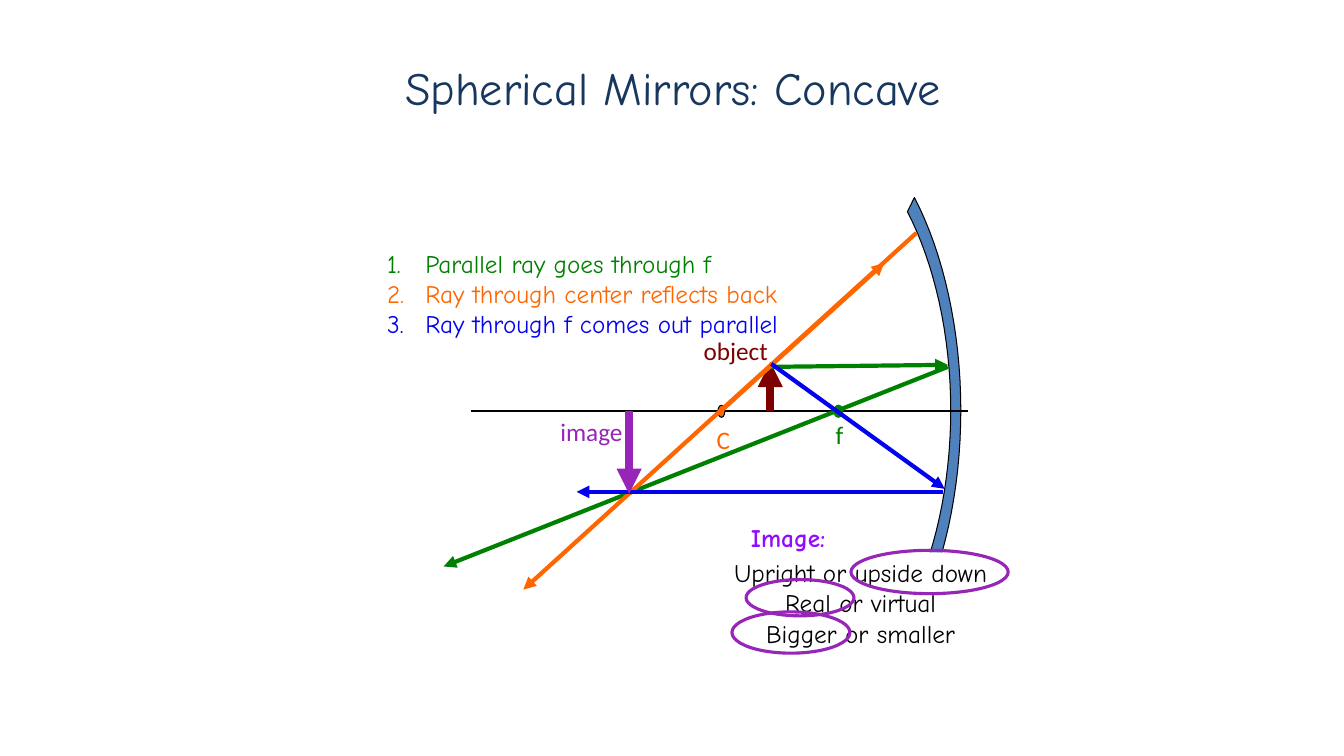
from lxml import etree
from pptx import Presentation
from pptx.dml.color import RGBColor
from pptx.enum import shapes, text
from pptx.oxml.ns import qn
from pptx.util import Inches, Pt

NAVY = RGBColor(0x17, 0x37, 0x5E)
STEEL = RGBColor(0x4F, 0x81, 0xBD)
BLACK = RGBColor(0, 0, 0)
WHITE = RGBColor(255, 255, 255)
GREEN = RGBColor(0, 0x80, 0)
ORANGE = RGBColor(0xFF, 0x66, 0)
BLUE = RGBColor(0x03, 0x02, 0xEF)
MAROON = RGBColor(0x7D, 0x01, 0x01)
PURPLE = RGBColor(0x96, 0x25, 0xB8)
VIOLET = RGBColor(0x92, 0x0A, 0xFF)
HAND_FONT = "Comic Neue"
AXIS_Y = 4.08

presentation = Presentation()
presentation.slide_width = Inches(13.33)
presentation.slide_height = Inches(7.5)
slide = presentation.slides.add_slide(presentation.slide_layouts[5])


def add_line(start, end, color, width, arrow=True):
    connector = slide.shapes.add_connector(
        shapes.MSO_CONNECTOR.STRAIGHT, *map(Inches, start + end))
    connector.line.color.rgb = color
    connector.line.width = Pt(width)
    properties = connector._element.spPr
    if arrow:
        outline = properties.find(qn("a:ln"))
        etree.SubElement(outline, qn("a:tailEnd"), type="triangle")
    etree.SubElement(properties, qn("a:effectLst"))


def add_text(box, lines, font, align=text.PP_ALIGN.LEFT, wrap=False, bold=False,
             fill=None, numbered=False):
    shape = slide.shapes.add_textbox(*map(Inches, box))
    if fill is not None:
        shape.fill.solid()
        shape.fill.fore_color.rgb = fill
    frame = shape.text_frame
    frame.word_wrap = wrap
    for index, (line, color) in enumerate(lines):
        paragraph = frame.paragraphs[0] if index == 0 else frame.add_paragraph()
        paragraph.text = line
        paragraph.alignment = align
        if numbered:
            properties = paragraph._p.get_or_add_pPr()
            properties.set("marL", str(Inches(0.38)))
            properties.set("indent", str(-Inches(0.38)))
            etree.SubElement(properties, qn("a:buAutoNum"), type="arabicPeriod")
        paragraph.font.size = Pt(18)
        paragraph.font.name = font
        paragraph.font.bold = bold
        paragraph.font.color.rgb = color


# Title
title = slide.shapes.title
title.left, title.top, title.width, title.height = map(Inches, (3.02, 0.39, 7.31, 0.94))
title.text_frame.text = "Spherical Mirrors: Concave"
title.text_frame.vertical_anchor = text.MSO_ANCHOR.MIDDLE
paragraph = title.text_frame.paragraphs[0]
paragraph.alignment = text.PP_ALIGN.CENTER
paragraph.font.size = Pt(33)
paragraph.font.name = HAND_FONT
paragraph.font.color.rgb = NAVY

# Curved mirror: inner edge down, outer edge back up
mirror_curves = [
    ((9, 2.1), (9.27, 2.62), (9.43, 3.33), (9.43, 4.07)),
    ((9.43, 4.07), (9.43, 4.81), (9.27, 5.53), (9, 6.04)),
    ((9.07, 6.18), (9.36, 5.63), (9.53, 4.87), (9.53, 4.07)),
    ((9.53, 4.07), (9.53, 3.28), (9.36, 2.52), (9.07, 1.96)),
]
STEPS = 16
mirror_points = []
for curve in mirror_curves:
    for step in range(STEPS + 1):
        t = step / STEPS
        weights = ((1 - t) ** 3, 3 * t * (1 - t) ** 2, 3 * t ** 2 * (1 - t), t ** 3)
        mirror_points.append(tuple(
            Inches(sum(weight * point[axis] for weight, point in zip(weights, curve)))
            for axis in (0, 1)))
builder = slide.shapes.build_freeform(*mirror_points[0])
builder.add_line_segments(mirror_points[1:], close=True)
mirror = builder.convert_to_shape()
mirror.shadow.inherit = False
mirror.fill.solid()
mirror.fill.fore_color.rgb = STEEL
mirror.line.color.rgb = BLACK
mirror.line.width = Pt(0.75)

# Optical axis and object
add_line((4.67, AXIS_Y), (9.6, AXIS_Y), BLACK, 1.5, arrow=False)
add_line((7.64, AXIS_Y), (7.64, 3.59), MAROON, 6)

# Centre and focal point
for left, width, fill, outline in [(7.12, 0.07, ORANGE, BLACK), (8.27, 0.09, GREEN, GREEN)]:
    dot = slide.shapes.add_shape(
        shapes.MSO_SHAPE.OVAL, Inches(left), Inches(4.02), Inches(width), Inches(0.12))
    dot.shadow.inherit = False
    dot.fill.solid()
    dot.fill.fore_color.rgb = fill
    dot.line.color.rgb = outline
    dot.line.width = Pt(0.75)

# Ray rules
add_text((3.74, 2.41, 4.52, 1.01), [
    ("Parallel ray goes through f", GREEN),
    ("Ray through center reflects back", ORANGE),
    ("Ray through f comes out parallel", BLUE),
], HAND_FONT, wrap=True, fill=WHITE, numbered=True)

# Rays
for start, end, color in [
    ((7.63, 3.64), (9.4, 3.62), GREEN),
    ((9.4, 3.64), (4.4, 5.62), GREEN),
    ((7.17, 4.06), (8.77, 2.61), ORANGE),
    ((9.09, 2.31), (5.19, 5.85), ORANGE),
    ((7.65, 3.61), (9.37, 4.85), BLUE),
    ((9.35, 4.88), (5.72, 4.88), BLUE),
]:
    add_line(start, end, color, 3)

# Image arrow and diagram labels
add_line((6.24, AXIS_Y), (6.24, 4.9), PURPLE, 6)
for label, left, top, width, color in [
    ("C", 7.01, 4.16, 0.34, ORANGE),
    ("f", 8.19, 4.11, 0.28, GREEN),
    ("object", 6.88, 3.28, 0.85, MAROON),
    ("image", 5.46, AXIS_Y, 0.83, PURPLE),
]:
    add_text((left, top, width, 0.4), [(label, color)], "Calibri")

# Image properties with the right answers circled
add_text((7.07, 5.48, 2.93, 1.01), [
    ("Upright or upside down", BLACK),
    ("Real or virtual", BLACK),
    ("Bigger or smaller", BLACK),
], HAND_FONT, align=text.PP_ALIGN.CENTER, wrap=True, fill=WHITE)
for box in [(8.44, 5.46, 1.56, 0.43), (7.4, 5.75, 1.07, 0.36), (7.26, 6.07, 1.17, 0.41)]:
    circle = slide.shapes.add_shape(shapes.MSO_SHAPE.OVAL, *map(Inches, box))
    circle.shadow.inherit = False
    circle.fill.background()
    circle.line.color.rgb = PURPLE
    circle.line.width = Pt(2.25)
add_text((7.35, 5.13, 1.06, 0.4), [("Image:", VIOLET)], HAND_FONT, bold=True)

presentation.save("out.pptx")
